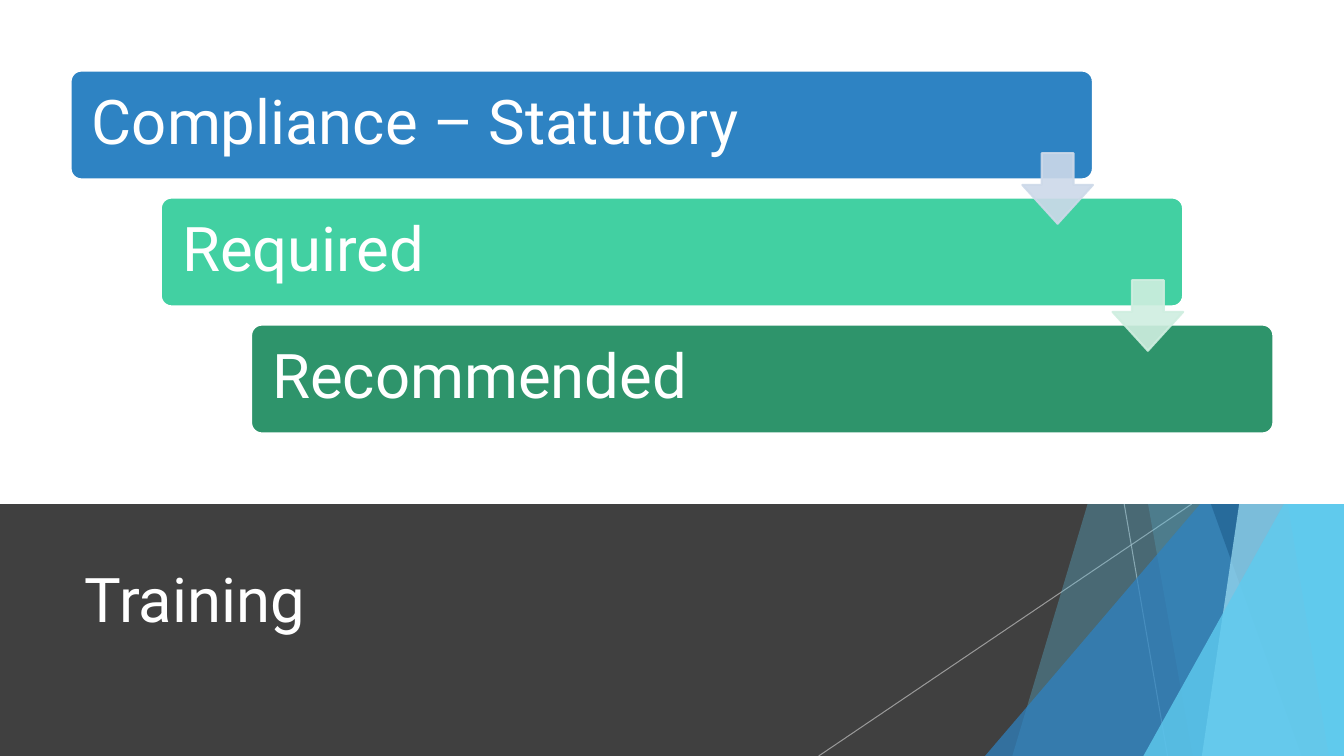
from lxml import etree
from pptx import Presentation
from pptx.dml.color import RGBColor
from pptx.enum import shapes, text
from pptx.oxml.ns import qn
from pptx.util import Inches, Pt

# Content
TITLE = "Training"
FONT, SIZE = "Roboto", 44
WIDE, HIGH, SPLIT = 13.33, 7.5, 5
BARS = [("Compliance – Statutory", "2E83C3"),
        ("Required", "42D0A2"),
        ("Recommended", "2E946B")]
ARROWS = ["CDD9E9", "CFEEE0"]
RAYS = [(11.15, 11.58), (11.82, 8.12)]  # x at the split, x at the bottom
# Facets: kind, left edge, colour, opacity
# A slab has x at top and bottom; a wedge has its left and top
FACETS = [("slab", (12.28, 10.04), "5FCBEF", 30),
          ("slab", (10.5, 11.83), "5FCBEF", 20),
          ("wedge", (9.77, 3.33), "2E83C3", 72),
          ("slab", (10.21, 12.91), "226292", 70),
          ("slab", (13.03, 11.92), "9FE0F5", 70),
          ("slab", (11.96, 13.18), "5FCBEF", 65),
          ("wedge", (11.34, 3.93), "5FCBEF", 80)]

deck = Presentation()
deck.slide_width, deck.slide_height = Inches(WIDE), Inches(HIGH)
slide = deck.slides.add_slide(deck.slide_layouts[5])
tree = slide.shapes
KIND = shapes.MSO_SHAPE


def rgb(code):
    return RGBColor.from_string(code)


def fade(shape, alpha):
    for tint in shape._element.spPr.iter(qn("a:srgbClr")):
        etree.SubElement(tint, qn("a:alpha")).set("val", str(alpha * 1000))


def paint(shape, fill, line=None, alpha=100):
    shape.shadow.inherit = False
    shape.fill.solid()
    shape.fill.fore_color.rgb = rgb(fill)
    if line:
        shape.line.color.rgb = rgb(line)
        shape.line.width = Pt(1.5)
    else:
        shape.line.fill.background()
    if alpha < 100:
        fade(shape, alpha)


def add(kind, left, top, wide, high, fill, line=None, alpha=100, adj=()):
    shape = tree.add_shape(kind, *map(Inches, (left, top, wide, high)))
    for i, part in enumerate(adj):
        shape.adjustments[i] = part
    paint(shape, fill, line, alpha)
    return shape


def write(shape, words):
    frame = shape.text_frame
    frame.word_wrap = True
    frame.vertical_anchor = text.MSO_ANCHOR.MIDDLE
    para = frame.paragraphs[0]
    para.alignment = text.PP_ALIGN.LEFT
    run = para.add_run()
    run.text = words
    run.font.name, run.font.size = FONT, Pt(SIZE)
    run.font.color.rgb = rgb("FFFFFF")
    return frame, para


# Dark band
add(KIND.RECTANGLE, 0, SPLIT, WIDE, HIGH - SPLIT, "404040")

# Thin rays
for start, end in RAYS:
    ray = tree.add_connector(shapes.MSO_CONNECTOR.STRAIGHT, *map(
        Inches, (start, SPLIT, end, HIGH)))
    ray.line.color.rgb = rgb("BFBFBF")
    ray.line.width = Pt(0.75)
    fade(ray, 70)
    etree.SubElement(ray._element.spPr, qn("a:effectLst"))

# Facets, all reaching the right and bottom edges
for kind, (a, b), tint, alpha in FACETS:
    if kind == "wedge":
        add(KIND.ISOSCELES_TRIANGLE, a, b, WIDE - a, HIGH - b, tint,
            alpha=alpha, adj=[1])
    else:
        pen = tree.build_freeform(Inches(a), 0)
        pen.add_line_segments([(Inches(x), Inches(y)) for x, y in (
            (WIDE, 0), (WIDE, HIGH), (b, HIGH))], close=True)
        paint(pen.convert_to_shape(), tint, alpha=alpha)

# Title, brought in front of the band
title = tree.title
title.left, title.top, title.width, title.height = map(
    Inches, (0.74, 5.21, 9.4, 1.44))
write(title, TITLE)
tree._spTree.append(title._element)

# White panel
add(KIND.RECTANGLE, 0, 0, WIDE, SPLIT, "FFFFFF")

# Stepped bars
LEFT, TOP, BAR_W, BAR_H = 0.7, 0.7, 10.14, 1.08
STEP_X, STEP_Y = 0.895, 1.26
for i, (words, tint) in enumerate(BARS):
    bar = add(KIND.ROUNDED_RECTANGLE, LEFT + i * STEP_X, TOP + i * STEP_Y,
              BAR_W, BAR_H, tint, "FFFFFF", adj=[0.1])
    frame, para = write(bar, words)
    frame.margin_left = frame.margin_right = Inches(0.18)
    frame.margin_top = frame.margin_bottom = Inches(0.18)
    para.line_spacing = 0.9

# Arrows at the right end of each step
SIDE = 0.7
for i, tint in enumerate(ARROWS):
    add(KIND.DOWN_ARROW, LEFT + BAR_W - SIDE + i * STEP_X, 1.52 + i * STEP_Y,
        SIDE, SIDE, tint, tint, 90, adj=[0.45, 0.55])

deck.save("out.pptx")
